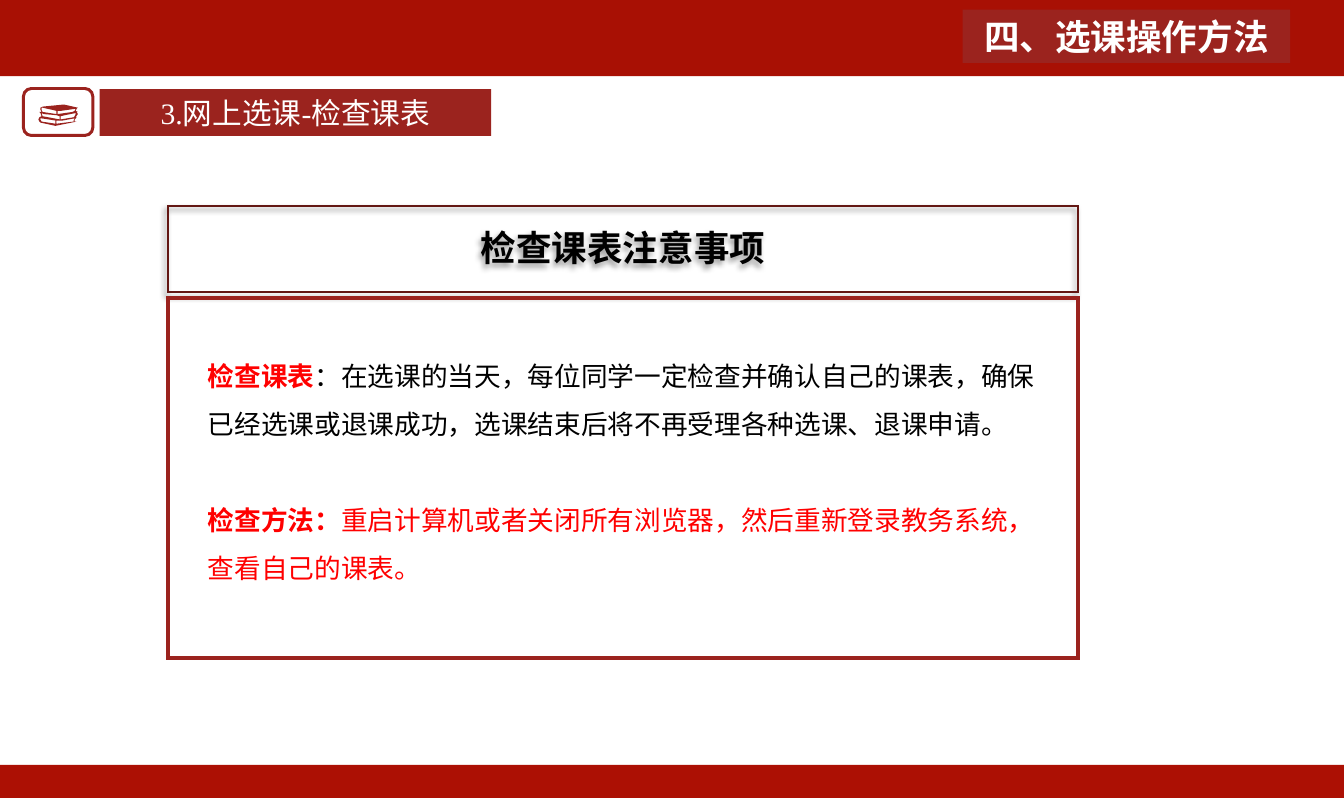
"""Builds the course selection slide about checking the timetable."""
import pptx
import pptx.dml.color
import pptx.enum.shapes
import pptx.enum.text
import pptx.oxml
import pptx.oxml.ns
import pptx.util

SANS = "Noto Sans CJK SC"
SERIF = "Times New Roman"
BRICK = "9B231E"
RED = "FF0000"
BLACK = "000000"
WHITE = "FFFFFF"
NAMESPACE = pptx.oxml.ns.nsdecls("a")
CELL = pptx.util.Inches(0.1)
COLUMNS, ROWS = 126, 74.8
Shape = pptx.enum.shapes.MSO_SHAPE


def paint(shape, fill=None, line=None, width=1):
    """Set the fill and outline of a shape from hex colours."""
    shape.shadow.inherit = False
    for part, colour in ((shape.fill, fill), (shape.line.fill, line)):
        if colour:
            part.solid()
            part.fore_color.rgb = pptx.dml.color.RGBColor.from_string(colour)
        else:
            part.background()
    if line:
        shape.line.width = pptx.util.Pt(width)
        shape.line._get_or_add_ln().append(
            pptx.oxml.parse_xml(f'<a:miter {NAMESPACE} lim="800000"/>'))


def write(para, text, size=18, font=SANS, colour=BLACK, bold=False):
    """Append a formatted span to a paragraph."""
    span = para.add_run()
    span.text = text
    span.font.size = pptx.util.Pt(size)
    span.font.name = font
    span.font.bold = bold
    span.font.color.rgb = pptx.dml.color.RGBColor.from_string(colour)
    span.font._element.append(
        pptx.oxml.parse_xml(f'<a:ea {NAMESPACE} typeface="{SANS}"/>'))


deck = pptx.Presentation()
deck.slide_width = int(COLUMNS * CELL)
deck.slide_height = int(ROWS * CELL)
page = deck.slides.add_slide(deck.slide_layouts[6])

panel_left, panel_width = 15.75, 85.3
shapes = {}
for name, kind, place, style in (
    ("top band", Shape.RECTANGLE, (0, 0, COLUMNS, 7.15), {"fill": "A81004"}),
    ("bottom band", Shape.RECTANGLE, (0, 71.7, COLUMNS, 3.1), {"fill": "AC1004"}),
    ("icon frame", Shape.ROUNDED_RECTANGLE, (2.2, 8.3, 6.5, 4.4), {"line": BRICK, "width": 2}),
    ("section", Shape.RECTANGLE, (9.35, 8.35, 36.7, 4.4), {"fill": BRICK}),
    ("chapter", Shape.RECTANGLE, (90.25, 0.9, 30.7, 5), {"fill": BRICK}),
    ("heading", Shape.RECTANGLE, (panel_left, 19.3, panel_width, 8.1), {"line": "631713", "width": 1.5}),
    ("panel", Shape.RECTANGLE, (panel_left, 27.9, panel_width, 33.8), {"line": BRICK, "width": 2.5}),
):
    shapes[name] = page.shapes.add_shape(kind, *(int(share * CELL) for share in place))
    paint(shapes[name], **style)

book_contours = (
    ((71, 104), (72, 102), (73, 101), (60, 98), (40, 100), (38, 101), (38, 103), (39, 105),
     (37, 105), (38, 106), (39, 109), (37, 110), (36, 112), (37, 114), (38, 115), (52, 118),
     (72, 114), (70, 114), (70, 112), (71, 111), (72, 110), (71, 110), (73, 107), (72, 105), (73, 105)),
    ((54, 104), (57, 104), (71, 102), (70, 104), (68, 105), (54, 107)),
    ((39, 106), (41, 107), (53, 108), (56, 109), (56, 112), (40, 109)),
    ((39, 103), (39, 101), (40, 101), (49, 103), (53, 104), (53, 107), (40, 105)),
    ((52, 116), (39, 114), (38, 112), (38, 111), (39, 111), (52, 113)),
    ((69, 113), (69, 114), (53, 116), (53, 113), (59, 113), (70, 111)),
    ((70, 109), (69, 110), (57, 112), (57, 109), (61, 108), (71, 106), (71, 107)),
)
books = page.shapes.build_freeform(*book_contours[0][0], scale=CELL / 10)
books.add_line_segments(book_contours[0][1:])
for contour in book_contours[1:]:
    books.move_to(*contour[0])
    books.add_line_segments(contour[1:])
paint(books.convert_to_shape(), fill=BRICK)

for name, text, style in (
    ("section", "3.网上选课-检查课表", {"size": 20, "font": SERIF, "colour": WHITE}),
    ("chapter", "四、选课操作方法", {"size": 24, "font": SERIF, "colour": WHITE, "bold": True}),
    ("heading", "检查课表注意事项", {"size": 24, "bold": True}),
):
    frame = shapes[name].text_frame
    frame.word_wrap = True
    frame.vertical_anchor = pptx.enum.text.MSO_ANCHOR.MIDDLE
    frame.paragraphs[0].alignment = pptx.enum.text.PP_ALIGN.CENTER
    write(frame.paragraphs[0], text, **style)
shapes["heading"].text_frame.margin_bottom = int(0.9 * CELL)

effects = shapes["heading"]._element.spPr.find(pptx.oxml.ns.qn("a:effectLst"))
effects.append(pptx.oxml.parse_xml(
    f'<a:outerShdw {NAMESPACE} blurRad="50800" dist="38100" dir="8100000" rotWithShape="0">'
    f'<a:srgbClr val="{BLACK}"><a:alpha val="40000"/></a:srgbClr></a:outerShdw>'))

box = page.shapes.add_textbox(*(int(share * CELL) for share in (18.5, 31.7, 79.8, 23.2)))
box.text_frame.word_wrap = True
notices = (
    (("检查课表", {"colour": RED, "bold": True}),
     ("：在选课的当天，每位同学一定检查并确认自己的课表，确保已经选课或退课成功，选课结束后将不再受理各种选课、退课申请。", {})),
    (("检查方法：", {"colour": RED, "bold": True}),
     ("重启计算机或者关闭所有浏览器，然后重新登录教务系统，查看自己的课表。", {"colour": RED})),
)
for index, notice in enumerate(notices):
    para = box.text_frame.add_paragraph() if index else box.text_frame.paragraphs[0]
    para.line_spacing = 1.5
    para.space_before = pptx.util.Pt(32.4 * index)
    for text, style in notice:
        write(para, text, **style)

deck.save("out.pptx")
